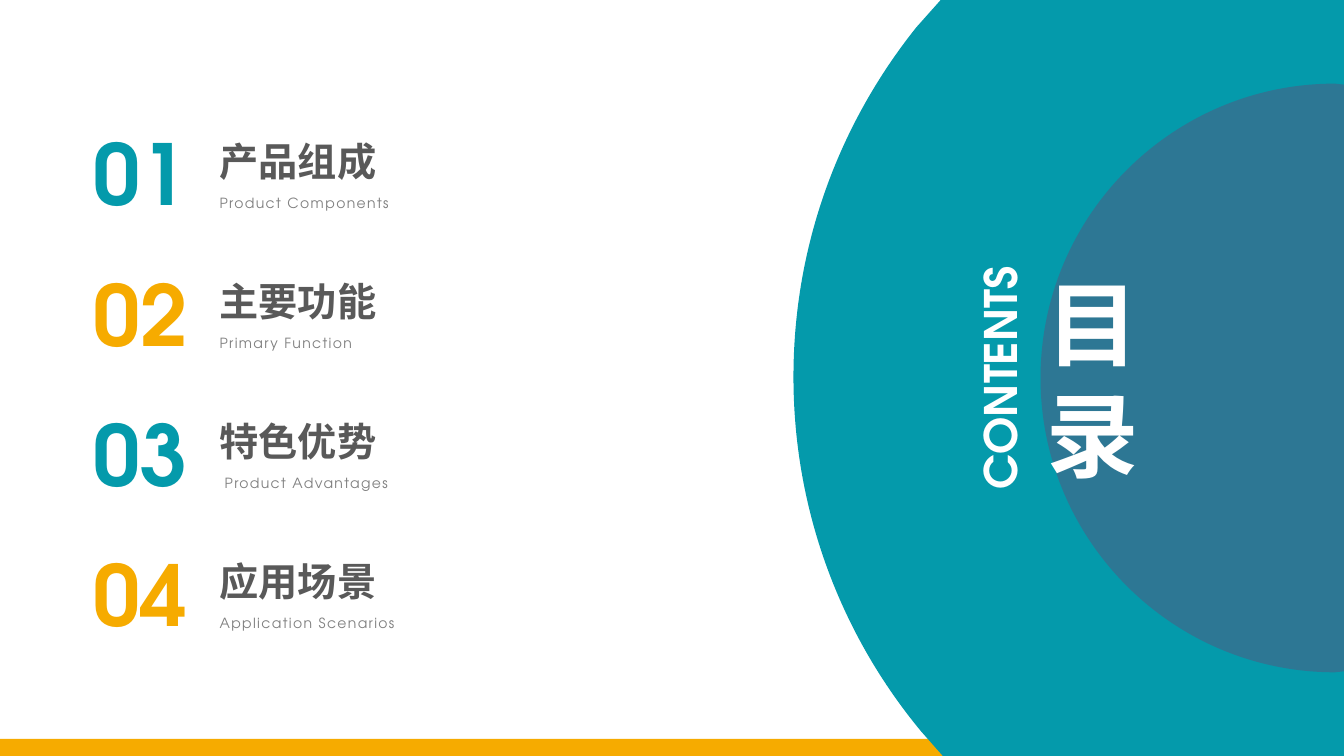
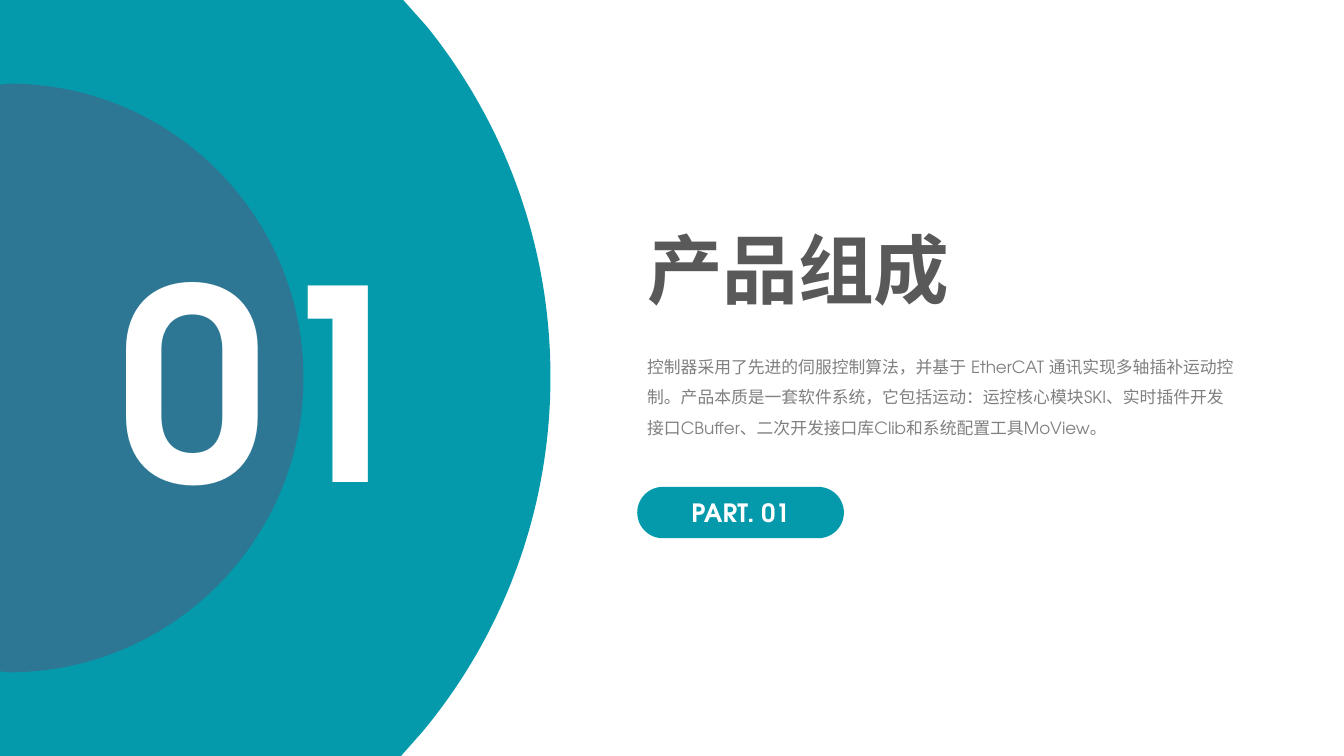
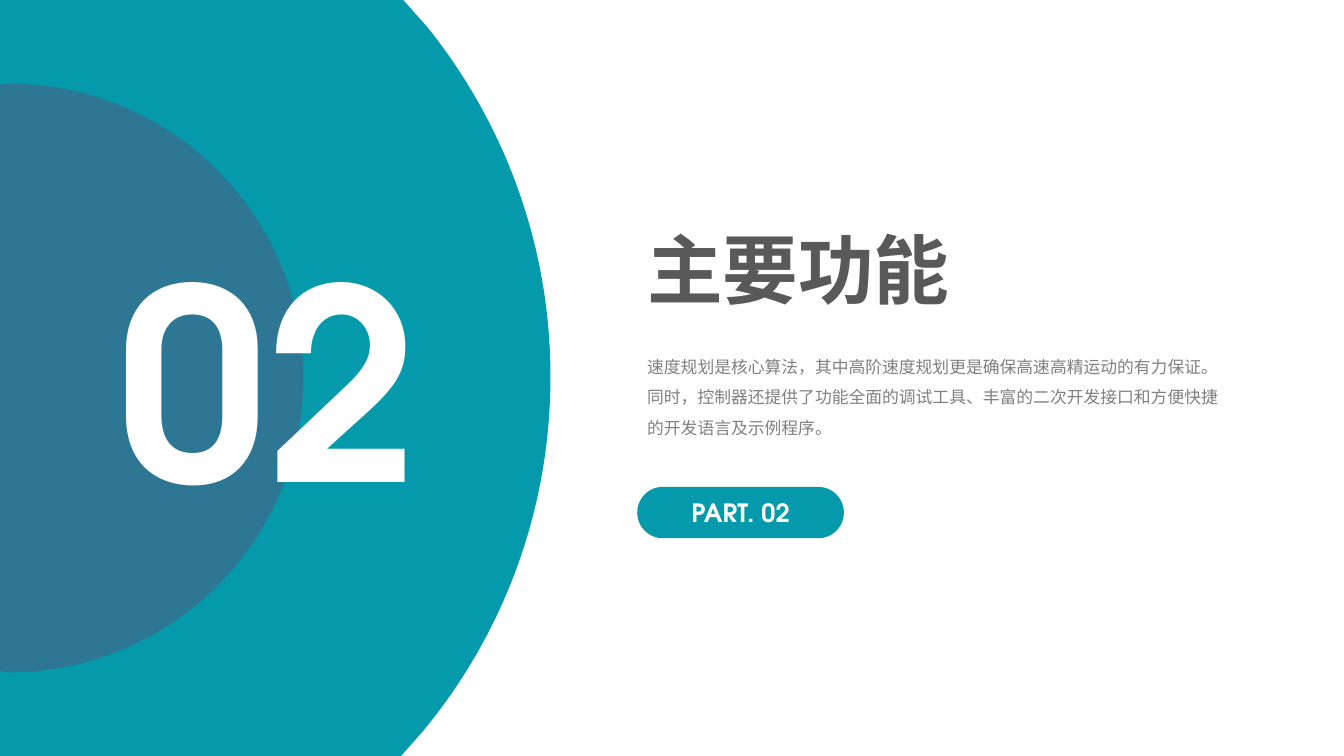
from dataclasses import dataclass
from typing import Sequence

from lxml.etree import SubElement
from pptx import Presentation
from pptx.dml.color import RGBColor
from pptx.enum.lang import MSO_LANGUAGE_ID
from pptx.enum.shapes import MSO_SHAPE
from pptx.enum.text import MSO_ANCHOR, MSO_AUTO_SIZE, PP_ALIGN
from pptx.oxml.ns import qn
from pptx.shapes.autoshape import Shape
from pptx.slide import Slide
from pptx.util import Inches, Pt

# Shared style
FONT = "TeX Gyre Adventor"
TEAL = RGBColor(0x04, 0x9A, 0xAB)
BLUE = RGBColor(0x2D, 0x77, 0x94)
AMBER = RGBColor(0xF6, 0xAB, 0x00)
WHITE = RGBColor(0xFF, 0xFF, 0xFF)
DARK = RGBColor(0x59, 0x59, 0x59)
GRAY = RGBColor(0x80, 0x80, 0x80)
SLIDE_W, SLIDE_H = 13.33, 7.5

Point = tuple[float, float]


@dataclass(frozen=True)
class Disc:
    """Outline at the left edge: a start, then lines (1 point) or curves (3)."""
    color: RGBColor
    start: Point
    segments: tuple[tuple[Point, ...], ...]


@dataclass(frozen=True)
class TextStyle:
    size: float
    color: RGBColor
    bold: bool = True
    align: PP_ALIGN = PP_ALIGN.LEFT
    line_spacing: float | None = None
    letter_spacing: float = 0


@dataclass(frozen=True)
class Chapter:
    number: str
    title: str
    english: str
    english_indent: float = 0


@dataclass(frozen=True)
class Section:
    chapter: Chapter
    summary: str


DISCS = (
    Disc(TEAL, (4, 0), (
        ((0, 0),), ((0, 7.52),), ((3.96, 7.52),), ((4.19, 7.26),),
        ((4.98, 6.31), (5.46, 5.08), (5.46, 3.74)),
        ((5.46, 2.42), (5, 1.22), (4.24, 0.27)),
    )),
    Disc(BLUE, (0.09, 0.83), (
        ((0, 0.84),), ((0, 6.66),), ((0.09, 6.67),),
        ((1.7, 6.67), (3.01, 5.36), (3.01, 3.75)),
        ((3.01, 2.14), (1.7, 0.83), (0.09, 0.83)),
    )),
)

CHAPTERS = (
    Chapter("01", "产品组成", "Product Components"),
    Chapter("02", "主要功能", "Primary Function"),
    Chapter("03", "特色优势", "Product Advantages", 0.05),
    Chapter("04", "应用场景", "Application Scenarios"),
)

SECTIONS = (
    Section(CHAPTERS[0],
            "控制器采用了先进的伺服控制算法，并基于 EtherCAT 通讯实现多轴插补运动控制。"
            "产品本质是一套软件系统，它包括运动：运控核心模块SKI、实时插件开发接口CBuffer、"
            "二次开发接口库Clib和系统配置工具MoView。"),
    Section(CHAPTERS[1],
            "速度规划是核心算法，其中高阶速度规划更是确保高速高精运动的有力保证。"
            "同时，控制器还提供了功能全面的调试工具、丰富的二次开发接口和方便快捷的开发语言及示例程序。"),
)


def write(shape: Shape, lines: Sequence[str], style: TextStyle) -> None:
    frame = shape.text_frame
    for index, line in enumerate(lines):
        paragraph = frame.add_paragraph() if index else frame.paragraphs[0]
        paragraph.alignment = style.align
        if style.line_spacing:
            paragraph.line_spacing = style.line_spacing
        run = paragraph.add_run()
        run.text = line
        font = run.font
        font.size, font.bold = Pt(style.size), style.bold
        font.color.rgb = style.color
        font.name = FONT
        font.language_id = MSO_LANGUAGE_ID.SIMPLIFIED_CHINESE
        properties = run._r.get_or_add_rPr()
        SubElement(properties, qn("a:ea")).set("typeface", FONT)
        if style.letter_spacing:
            properties.set("spc", str(round(style.letter_spacing * 100)))


def add_text(slide: Slide, left: float, top: float, width: float, height: float,
             lines: Sequence[str], style: TextStyle, wrap: bool = False,
             inset: bool = True) -> Shape:
    box = slide.shapes.add_textbox(Inches(left), Inches(top), Inches(width), Inches(height))
    frame = box.text_frame
    frame.word_wrap = wrap
    frame.auto_size = MSO_AUTO_SIZE.SHAPE_TO_FIT_TEXT
    if not inset:
        frame.margin_left = frame.margin_right = 0
        frame.margin_top = frame.margin_bottom = 0
    write(box, lines, style)
    return box


def paint(shape: Shape, color: RGBColor) -> None:
    shape.shadow.inherit = False
    shape.fill.solid()
    shape.fill.fore_color.rgb = color
    shape.line.fill.background()


def add_discs(slide: Slide, on_right: bool = False) -> None:
    def place(point: Point) -> tuple[int, int]:
        x, y = point
        return Inches(SLIDE_W - x if on_right else x), Inches(y)

    for disc in DISCS:
        builder = slide.shapes.build_freeform(*place(disc.start))
        builder.add_line_segments([place(segment[-1]) for segment in disc.segments])
        shape = builder.convert_to_shape()
        paint(shape, disc.color)

        # Bend the segments that have control points
        sides = list(shape._element.iter(qn("a:lnTo")))
        for side, segment in zip(sides, disc.segments):
            if len(segment) == 3:
                side.tag = qn("a:cubicBezTo")
                for position, control in enumerate(segment[:2]):
                    x, y = place(control)
                    handle = SubElement(side, qn("a:pt"))
                    handle.set("x", str(x - shape.left))
                    handle.set("y", str(y - shape.top))
                    side.insert(position, handle)


def add_chapter(slide: Slide, chapter: Chapter, top: float, color: RGBColor) -> None:
    add_text(slide, 0.83, top, 1.15, 1.11, [chapter.number], TextStyle(60, color))
    add_text(slide, 2.08, top + 0.15, 1.76, 0.57, [chapter.title], TextStyle(28, DARK))
    add_text(slide, 2.08 + chapter.english_indent, top + 0.67, 4.7, 0.32, [chapter.english],
             TextStyle(10, GRAY, bold=False, line_spacing=1.3, letter_spacing=1), wrap=True)


def build_contents(slide: Slide) -> None:
    # Bottom band and discs
    band = slide.shapes.add_shape(MSO_SHAPE.RECTANGLE, 0, Inches(7.33),
                                  Inches(SLIDE_W), Inches(0.17))
    paint(band, AMBER)
    add_discs(slide, on_right=True)

    # Heading in two languages
    heading = add_text(slide, 10, 2.64, 1.68, 2.22, ["目", "录"],
                       TextStyle(66, WHITE, align=PP_ALIGN.CENTER), wrap=True, inset=False)
    heading.text_frame.vertical_anchor = MSO_ANCHOR.MIDDLE
    english = add_text(slide, 9.65, 2.06, 0.54, 3.38, ["CONTENTS"],
                       TextStyle(32, WHITE, align=PP_ALIGN.CENTER), wrap=True, inset=False)
    english.text_frame._txBody.bodyPr.set("vert", "vert270")

    # Chapter list
    for index, chapter in enumerate(CHAPTERS):
        add_chapter(slide, chapter, 1.16 + 1.39 * index, AMBER if index % 2 else TEAL)


def build_section(slide: Slide, section: Section) -> None:
    # Discs with the chapter number
    add_discs(slide)
    chapter = section.chapter
    add_text(slide, 1.08, 2.1, 3.19, 3.3, [chapter.number], TextStyle(190, WHITE))

    # Title and summary
    add_text(slide, 6.32, 2.16, 3.2, 1.01, [chapter.title], TextStyle(54, DARK))
    add_text(slide, 6.32, 3.39, 6.02, 1.01, [section.summary],
             TextStyle(12, GRAY, bold=False, line_spacing=1.5), wrap=True)

    # Part label
    label = slide.shapes.add_shape(MSO_SHAPE.ROUNDED_RECTANGLE, Inches(6.32), Inches(4.83),
                                   Inches(2.05), Inches(0.51))
    label.adjustments[0] = 0.5
    paint(label, TEAL)
    label.text_frame.vertical_anchor = MSO_ANCHOR.MIDDLE
    write(label, [f"PART. {chapter.number}"], TextStyle(18, WHITE, align=PP_ALIGN.CENTER))


def main() -> None:
    deck = Presentation()
    deck.slide_width, deck.slide_height = Inches(SLIDE_W), Inches(SLIDE_H)
    blank = deck.slide_layouts[6]
    build_contents(deck.slides.add_slide(blank))
    for section in SECTIONS:
        build_section(deck.slides.add_slide(blank), section)
    deck.save("out.pptx")


if __name__ == "__main__":
    main()
